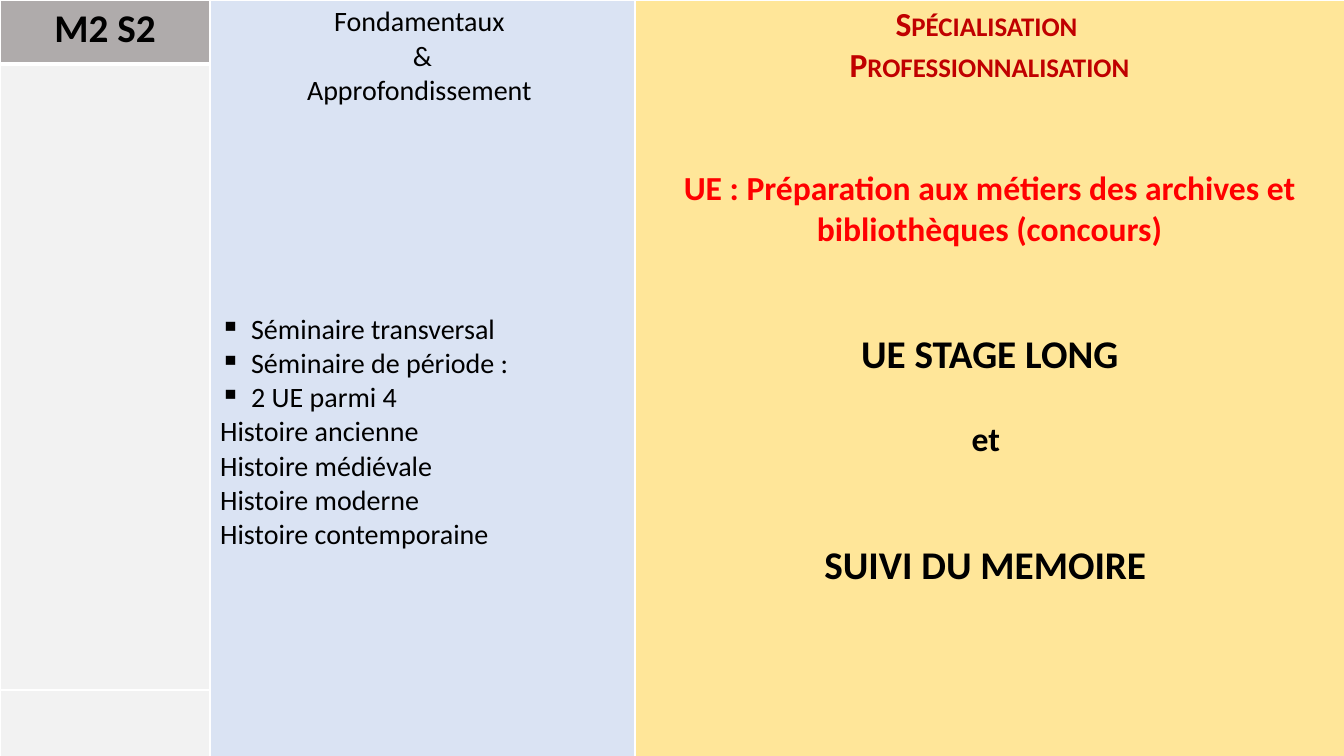
from lxml import etree
from pptx import Presentation
from pptx import util as u
from pptx.dml.color import RGBColor
from pptx.enum import text
from pptx.oxml.ns import qn

PX = 9071
COLUMNS = [210, 425, 709]
ROWS = [64, 626, 66]
CENTER, LEFT = text.PP_ALIGN.CENTER, text.PP_ALIGN.LEFT


def color(value):
    """Turn a hex string into a colour."""
    return RGBColor.from_string(value)


def style_cell(cell, fill, top=1, bottom=1):
    """Give a cell white borders and a solid fill."""
    properties = cell._tc.get_or_add_tcPr()
    for side, points in (("L", 1), ("R", 1), ("T", top), ("B", bottom)):
        line = etree.SubElement(properties, qn(f"a:ln{side}"), w=str(u.Pt(points)))
        solid = etree.SubElement(line, qn("a:solidFill"))
        etree.SubElement(solid, qn("a:srgbClr"), val="FFFFFF")
    cell.fill.solid()
    cell.fill.fore_color.rgb = color(fill)


def add_line(cell, words, size, hue="000000", bold=False, align=CENTER,
             before=0, small_caps=False, bullet=False):
    """Write one paragraph into a cell, filling its first empty one."""
    frame = cell.text_frame
    paragraph = frame.add_paragraph() if frame.text else frame.paragraphs[0]
    run = paragraph.add_run()
    run.text = words
    paragraph.alignment = align
    paragraph.space_before = u.Pt(before)
    font = paragraph.font
    font.name, font.size, font.bold = "Calibri", u.Pt(size), bold
    font.color.rgb = color(hue)
    if small_caps:
        run._r.get_or_add_rPr().set("cap", "small")
    if bullet:
        properties = paragraph._p.get_or_add_pPr()
        properties.set("marL", str(31 * PX))
        properties.set("indent", str(-31 * PX))
        mark = etree.Element(qn("a:buChar"), char="▪")
        properties.find(qn("a:defRPr")).addprevious(mark)


def add_grid(slide):
    """Add the full-slide table with its two tall merged columns."""
    table = slide.shapes.add_table(len(ROWS), len(COLUMNS), 0, 0,
                                   sum(COLUMNS) * PX, sum(ROWS) * PX).table
    table.first_row = table.horz_banding = False
    for column, width in zip(table.columns, COLUMNS):
        column.width = width * PX
    for row, height in zip(table.rows, ROWS):
        row.height = height * PX
    for index in (1, 2):
        table.cell(0, index).merge(table.cell(2, index))
    style_cell(table.cell(0, 0), "AFABAB", bottom=3)
    style_cell(table.cell(1, 0), "F2F2F2", top=3)
    style_cell(table.cell(2, 0), "F2F2F2")
    for row in range(len(ROWS)):
        style_cell(table.cell(row, 1), "DAE3F3")
        style_cell(table.cell(row, 2), "FFE699")
    return table


def fill_fundamentals(cell):
    """Write the heading, seminars and periods of the core column."""
    for words in ("Fondamentaux ", "&", "Approfondissement "):
        add_line(cell, words, 20)
    seminars = ("Séminaire transversal", "Séminaire de période :", "2 UE parmi 4")
    for index, words in enumerate(seminars):
        add_line(cell, words, 20, align=LEFT, bullet=True,
                 before=0 if index else 146)
    for period in ("ancienne", "médiévale", "moderne", "contemporaine"):
        add_line(cell, f"Histoire {period}", 20, align=LEFT)


def fill_specialisation(cell):
    """Write the heading and units of the professional column."""
    for words in ("Spécialisation ", "Professionnalisation"):
        add_line(cell, words, 24, "C00000", bold=True, small_caps=True)
    add_line(cell, "UE : Préparation aux métiers des archives et bibliothèques (concours)",
             24, "FF0000", bold=True, before=58)
    add_line(cell, "UE STAGE LONG", 28, bold=True, before=58)
    add_line(cell, "et ", 24, bold=True, before=29)
    add_line(cell, "SUIVI DU MEMOIRE ", 28, bold=True, before=58)


def main():
    """Build and save the slide."""
    presentation = Presentation()
    presentation.slide_width = u.Inches(13.33)
    presentation.slide_height = u.Inches(7.5)
    slide = presentation.slides.add_slide(presentation.slide_layouts[6])
    table = add_grid(slide)
    add_line(table.cell(0, 0), "M2 S2", 28, bold=True)
    fill_fundamentals(table.cell(0, 1))
    fill_specialisation(table.cell(0, 2))
    presentation.save("out.pptx")


if __name__ == "__main__":
    main()
